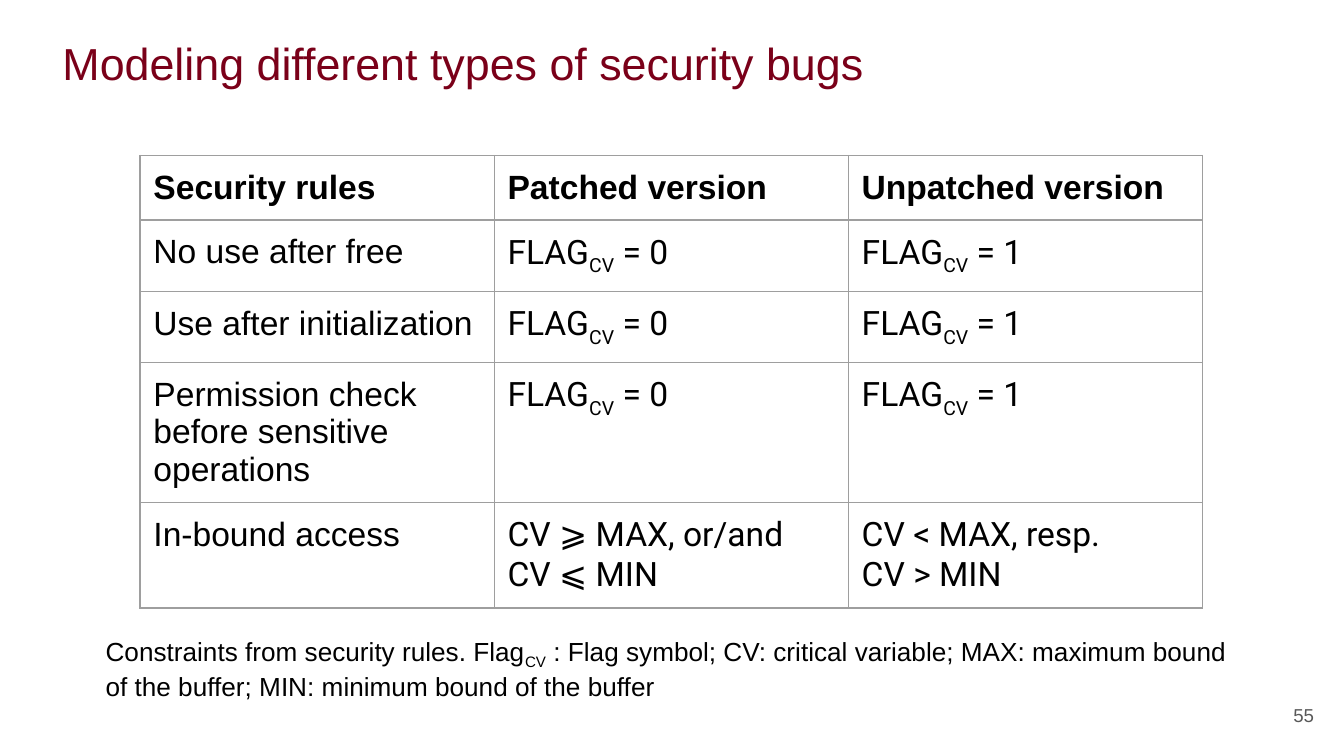
import pptx
import pptx.dml.color
import pptx.enum.text
import pptx.oxml
import pptx.oxml.ns
import pptx.util

EMU_PER_PX = 9525
MARGIN = pptx.util.Inches(0.1)
MAROON = pptx.dml.color.RGBColor(0x7A, 0x00, 0x19)
BLACK = pptx.dml.color.RGBColor(0x00, 0x00, 0x00)
GRAY = pptx.dml.color.RGBColor(0x59, 0x59, 0x59)
BORDER = pptx.dml.color.RGBColor(0x9E, 0x9E, 0x9E)
ALIGN = pptx.enum.text.PP_ALIGN
ANCHOR = pptx.enum.text.MSO_ANCHOR

RULES = [
    ("Security rules", "Patched version", "Unpatched version"),
    ("No use after free", "FLAG_CV_ = 0", "FLAG_CV_ = 1"),
    ("Use after initialization", "FLAG_CV_ = 0", "FLAG_CV_ = 1"),
    ("Permission check before sensitive operations", "FLAG_CV_ = 0", "FLAG_CV_ = 1"),
    ("In-bound access", "CV ⩾ MAX, or/and\nCV ⩽ MIN", "CV < MAX, resp.\nCV > MIN"),
]
CAPTION = (
    "Constraints from security rules. Flag_CV_ : Flag symbol; CV: critical variable; "
    "MAX: maximum bound of the buffer; MIN: minimum bound of the buffer"
)


def px(length):
    return pptx.util.Emu(length * EMU_PER_PX)


def write_text(frame, text, *, size, color=BLACK, font="Arial", bold=False,
               align=ALIGN.LEFT):
    for index, line in enumerate(text.split("\n")):
        paragraph = frame.paragraphs[0] if index == 0 else frame.add_paragraph()
        paragraph.alignment = align
        for position, part in enumerate(line.split("_")):
            run = paragraph.add_run()
            run.text = part
            run.font.name = font
            run.font.size = pptx.util.Pt(size)
            run.font.bold = bold
            run.font.color.rgb = color
            if position % 2:
                run.font._element.set("baseline", "-25000")


def set_margins(target):
    target.margin_left = target.margin_right = MARGIN
    target.margin_top = target.margin_bottom = MARGIN


def format_frame(frame, anchor):
    frame.word_wrap = True
    frame.auto_size = pptx.enum.text.MSO_AUTO_SIZE.NONE
    frame.vertical_anchor = anchor
    set_margins(frame)


def add_title(slide, text, left, top, width, height):
    title = slide.shapes.title
    title.left, title.top = px(left), px(top)
    title.width, title.height = px(width), px(height)
    format_frame(title.text_frame, ANCHOR.TOP)
    write_text(title.text_frame, text, size=24, color=MAROON)


def add_text(slide, text, left, top, width, height, *, anchor=ANCHOR.TOP, **text_format):
    shape = slide.shapes.add_textbox(px(left), px(top), px(width), px(height))
    format_frame(shape.text_frame, anchor)
    write_text(shape.text_frame, text, **text_format)


def set_borders(cell):
    properties = cell._tc.get_or_add_tcPr()
    for index, side in enumerate(("lnL", "lnR", "lnT", "lnB")):
        line = pptx.oxml.parse_xml(
            f'<a:{side} {pptx.oxml.ns.nsdecls("a")} w="{pptx.util.Pt(0.75)}">'
            f'<a:solidFill><a:srgbClr val="{BORDER}"/></a:solidFill></a:{side}>'
        )
        properties.insert(index, line)


def add_rules_table(slide, rows, left, top, column_width, row_height):
    columns = len(rows[0])
    table = slide.shapes.add_table(
        len(rows), columns, px(left), px(top),
        px(column_width * columns), px(row_height * len(rows)),
    ).table
    table.first_row = False
    table.horz_banding = False
    for row_index, row in enumerate(rows):
        for column_index, text in enumerate(row):
            cell = table.cell(row_index, column_index)
            cell.fill.background()
            set_borders(cell)
            set_margins(cell)
            header = row_index == 0
            font = "Arial" if header or column_index == 0 else "Roboto"
            write_text(cell.text_frame, text, size=18, font=font, bold=header)


def main():
    presentation = pptx.Presentation()
    presentation.slide_width, presentation.slide_height = px(960), px(540)
    slide = presentation.slides.add_slide(presentation.slide_layouts[5])
    add_title(slide, "Modeling different types of security bugs", 35, 16, 895, 60)
    add_rules_table(slide, RULES, left=100, top=111, column_width=253, row_height=40)
    add_text(slide, CAPTION, 66, 444, 828, 33, size=14)
    add_text(slide, "55", 890, 490, 58, 41, anchor=ANCHOR.MIDDLE,
             size=10, color=GRAY, align=ALIGN.RIGHT)
    presentation.save("out.pptx")


if __name__ == "__main__":
    main()
